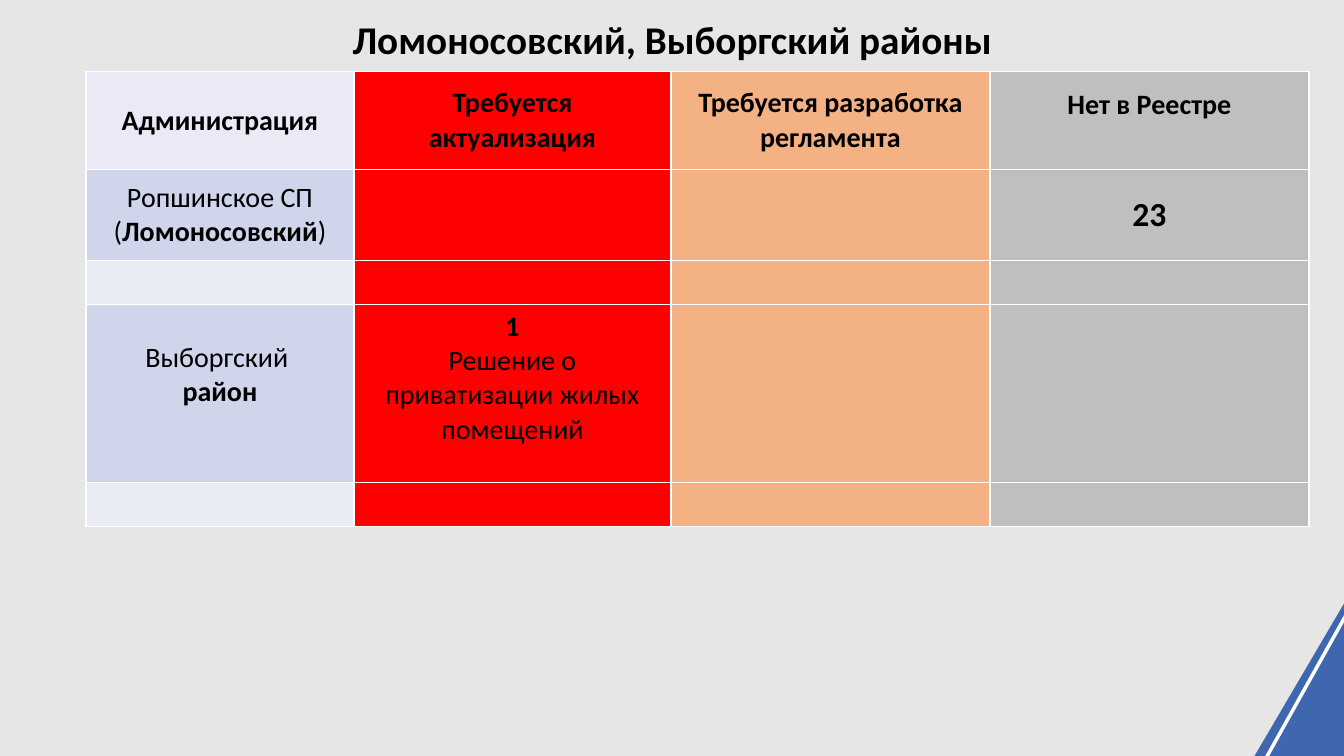
from dataclasses import dataclass

from pptx import Presentation
from pptx.dml.color import RGBColor
from pptx.enum.text import MSO_ANCHOR, PP_ALIGN
from pptx.util import Pt

SCALE = 914400 / 100.8


@dataclass(frozen=True)
class Theme:
    """Colours, font and type sizes of the slide."""
    font: str = "Calibri"
    background: str = "E7E6E6"
    text: str = "000000"
    white: str = "FFFFFF"
    corner: str = "3E67AF"
    header: str = "EBE9F5"
    bands: tuple = ("CFD5EA", "E9EBF5")
    statuses: tuple = ("FF0000", "F4B183", "BFBFBF")
    title_size: int = 28
    count_size: int = 24
    cell_size: int = 20


THEME = Theme()
COLUMNS = (268, 317, 319, 319)
ROWS = (98, 91, 44, 178, 44)
BOTTOM_MARGINS = {(0, 3): 37, (3, 0): 42, (3, 1): 36}
CONTENT = {
    (0, 0): [[("Администрация", True)]],
    (0, 1): [[("Требуется", True)], [("актуализация", True)]],
    (0, 2): [[("Требуется разработка регламента", True)]],
    (0, 3): [[("Нет в Реестре", True)]],
    (1, 0): [[("Ропшинское СП", False)],
             [("(", False), ("Ломоносовский", True), (")", False)]],
    (1, 3): [[("23", True)]],
    (3, 0): [[("Выборгский ", False)], [("район", True)]],
    (3, 1): [[("1", True)],
             [("Решение о приватизации жилых помещений", False)]],
}
SIZES = {(1, 3): THEME.count_size}


def px(length):
    """Turn pixels into EMU."""
    return round(length * SCALE)


def rgb(colour):
    """Turn a hex string into a colour."""
    return RGBColor.from_string(colour)


def write(frame, paragraphs, size):
    """Fill a text frame with centred paragraphs of (text, bold) runs."""
    for index, parts in enumerate(paragraphs):
        paragraph = frame.add_paragraph() if index else frame.paragraphs[0]
        paragraph.alignment = PP_ALIGN.CENTER
        for text, bold in parts:
            run = paragraph.add_run()
            run.text = text
            formats = {"name": THEME.font, "size": Pt(size), "bold": bold}
            for name, value in formats.items():
                setattr(run.font, name, value)
            run.font.color.rgb = rgb(THEME.text)


def add_title(slide, left, top, width, height):
    """Place the heading in the title placeholder."""
    title = slide.shapes.title
    box = {"left": left, "top": top, "width": width, "height": height}
    for name, value in box.items():
        setattr(title, name, px(value))
    title.text_frame.vertical_anchor = MSO_ANCHOR.MIDDLE
    write(title.text_frame, [[("Ломоносовский, Выборгский районы", True)]], THEME.title_size)


def cell_colour(row, column):
    """Choose the fill by status column, or by band in the first column."""
    if column:
        return THEME.statuses[column - 1]
    return THEME.bands[(row - 1) % 2] if row else THEME.header


def add_register(slide, left, top):
    """Build the table of administrations and regulation statuses."""
    table = slide.shapes.add_table(
        len(ROWS), len(COLUMNS), px(left), px(top), px(sum(COLUMNS)), px(sum(ROWS))).table
    for column, width in zip(table.columns, COLUMNS):
        column.width = px(width)
    for row, height in zip(table.rows, ROWS):
        row.height = px(height)
    for row in range(len(ROWS)):
        for column in range(len(COLUMNS)):
            place = row, column
            cell = table.cell(row, column)
            cell.vertical_anchor = MSO_ANCHOR.MIDDLE
            if place in BOTTOM_MARGINS:
                cell.margin_bottom = px(BOTTOM_MARGINS[place])
            cell.fill.solid()
            cell.fill.fore_color.rgb = rgb(cell_colour(row, column))
            write(cell.text_frame, CONTENT.get(place, []), SIZES.get(place, THEME.cell_size))


def add_outline(slide, left, top, points):
    """Draw a closed outline from points relative to its box."""
    start, *rest = [(px(left + x), px(top + y)) for x, y in points]
    builder = slide.shapes.build_freeform(*start, scale=1.0)
    builder.add_line_segments(rest, close=True)
    outline = builder.convert_to_shape()
    outline.shadow.inherit = False
    return outline


def add_corner(slide, left, top):
    """Draw the blue corner with its white stripe, bleeding over the edge."""
    corner = add_outline(slide, left, top, [(269, 0), (0, 458), (76, 562), (226, 155)])
    corner.fill.solid()
    corner.fill.fore_color.rgb = rgb(THEME.corner)
    corner.line.fill.background()
    stripe = add_outline(slide, left, top, [(12, 461), (258, 21), (91, 555)])
    stripe.fill.background()
    stripe.line.color.rgb = rgb(THEME.white)
    stripe.line.width = Pt(2.5)


def main():
    """Build and save the slide."""
    deck = Presentation()
    deck.slide_width, deck.slide_height = px(1344), px(756)
    slide = deck.slides.add_slide(deck.slide_layouts[5])
    slide.background.fill.solid()
    slide.background.fill.fore_color.rgb = rgb(THEME.background)
    add_corner(slide, 1234, 333)
    add_register(slide, 86, 71.5)
    add_title(slide, 339, 10, 666, 57)
    deck.save("out.pptx")


if __name__ == "__main__":
    main()
